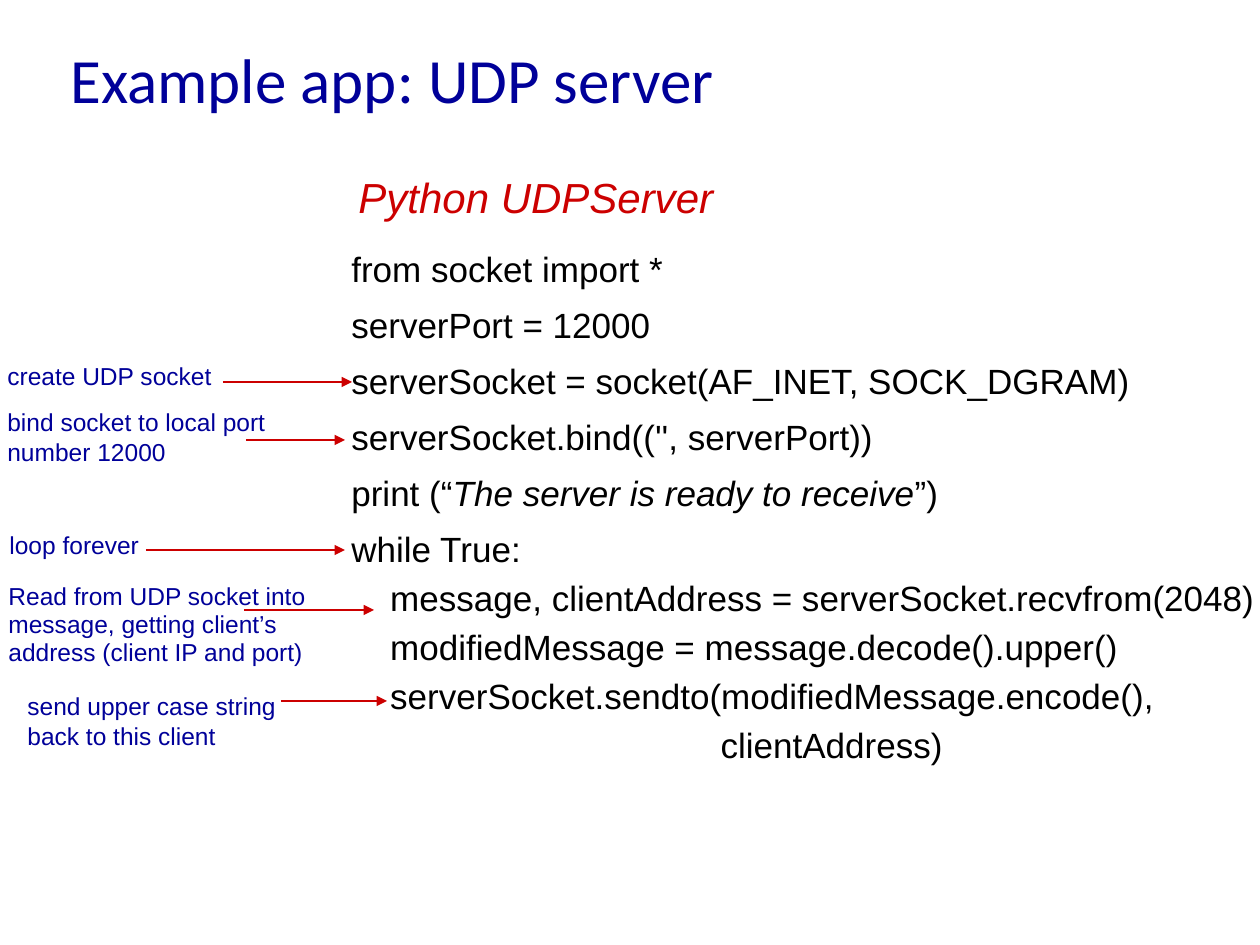
from pptx import Presentation, util as u
from pptx.dml import color
from pptx.enum import shapes, text
from pptx.oxml import ns
from lxml import etree

EMU_PER_PX = 914400 / 126
NAVY, RED, BLACK = "000099", "CC0000", "000000"

CODE_LINES = [
    (28, ["from socket import *"]),
    (28, ["serverPort = 12000"]),
    (28, ["serverSocket = socket(AF_INET, SOCK_DGRAM)"]),
    (28, ["serverSocket.bind(('', serverPort))"]),
    (28, ["print (“", "The server is ready to receive", "”)"]),
    (28, ["while True:"]),
    (24, ["    message, clientAddress = serverSocket.recvfrom(2048)"]),
    (24, ["    modifiedMessage = message.decode().upper()"]),
    (24, ["    serverSocket.sendto(modifiedMessage.encode(),"]),
    (24, ["                                      clientAddress)"]),
]

NOTES = [
    ("create UDP socket", (-5, 355, 353, 43), None, (223, 352, 382)),
    ("bind socket to local port number 12000", (-5, 401, 312, 72), None, (246, 345, 440)),
    ("loop forever", (-3, 525, 165, 42), 16, (146, 345, 550)),
    ("Read from UDP socket into message, getting client’s address (client IP and port)",
     (-4, 576, 324, 97), 16, (244, 374, 610)),
    ("send upper case string back to this client", (15, 685, 324, 72), None, (281, 387, 701)),
]


def px(value):
    """Turn whole pixels into EMU."""
    return u.Emu(round(value * EMU_PER_PX))


def rgb(value):
    """Turn a hex string into a colour."""
    return color.RGBColor.from_string(value)


def set_all(target, values):
    """Set each named attribute on the target."""
    for name, value in values.items():
        setattr(target, name, value)


def add_text(slide, box, lines, size, hex_color, font="Arial", italic=False, **frame_format):
    """Add a text box whose lines are (spacing, runs), every second run italic."""
    frame = slide.shapes.add_textbox(*map(px, box)).text_frame
    set_all(frame, {"word_wrap": True, **frame_format})
    for index, (spacing, runs) in enumerate(lines):
        paragraph = frame.add_paragraph() if index else frame.paragraphs[0]
        if index:
            paragraph.space_before = u.Pt(size * 0.2)
        if spacing:
            paragraph.line_spacing = u.Pt(spacing)
        for position, words in enumerate(runs):
            run = paragraph.add_run()
            run.text = words
            set_all(run.font, {"name": font, "size": u.Pt(size),
                               "italic": italic or position % 2 == 1})
            run.font.color.rgb = rgb(hex_color)


def add_arrow(slide, start, end, y):
    """Add a thin horizontal arrow pointing at a code line."""
    arrow = slide.shapes.add_connector(
        shapes.MSO_CONNECTOR.STRAIGHT, px(start), px(y), px(end), px(y))
    arrow.line.color.rgb = rgb(RED)
    arrow.line.width = u.Pt(1)
    etree.SubElement(arrow.line._get_or_add_ln(), ns.qn("a:tailEnd"), type="triangle")
    etree.SubElement(arrow._element.spPr, ns.qn("a:effectLst"))


def main():
    """Build the slide and save it."""
    presentation = Presentation()
    set_all(presentation, {"slide_width": px(1260), "slide_height": px(945)})
    slide = presentation.slides.add_slide(presentation.slide_layouts[6])
    grow = text.MSO_AUTO_SIZE.SHAPE_TO_FIT_TEXT

    add_text(slide, (58, 13, 1071, 131), [(None, ["Example app: UDP server"])], 36, NAVY,
             font="Calibri", vertical_anchor=text.MSO_ANCHOR.MIDDLE)
    add_text(slide, (339, 234, 935, 556), CODE_LINES, 20, BLACK,
             word_wrap=False, auto_size=grow)
    add_text(slide, (346, 165, 394, 64), [(None, ["Python UDPServer"])], 24, RED,
             italic=True, word_wrap=False, auto_size=grow)
    for words, box, spacing, arrow in NOTES:
        add_text(slide, box, [(spacing, [words])], 14, NAVY, auto_size=grow)
        add_arrow(slide, *arrow)

    presentation.save("out.pptx")


if __name__ == "__main__":
    main()
